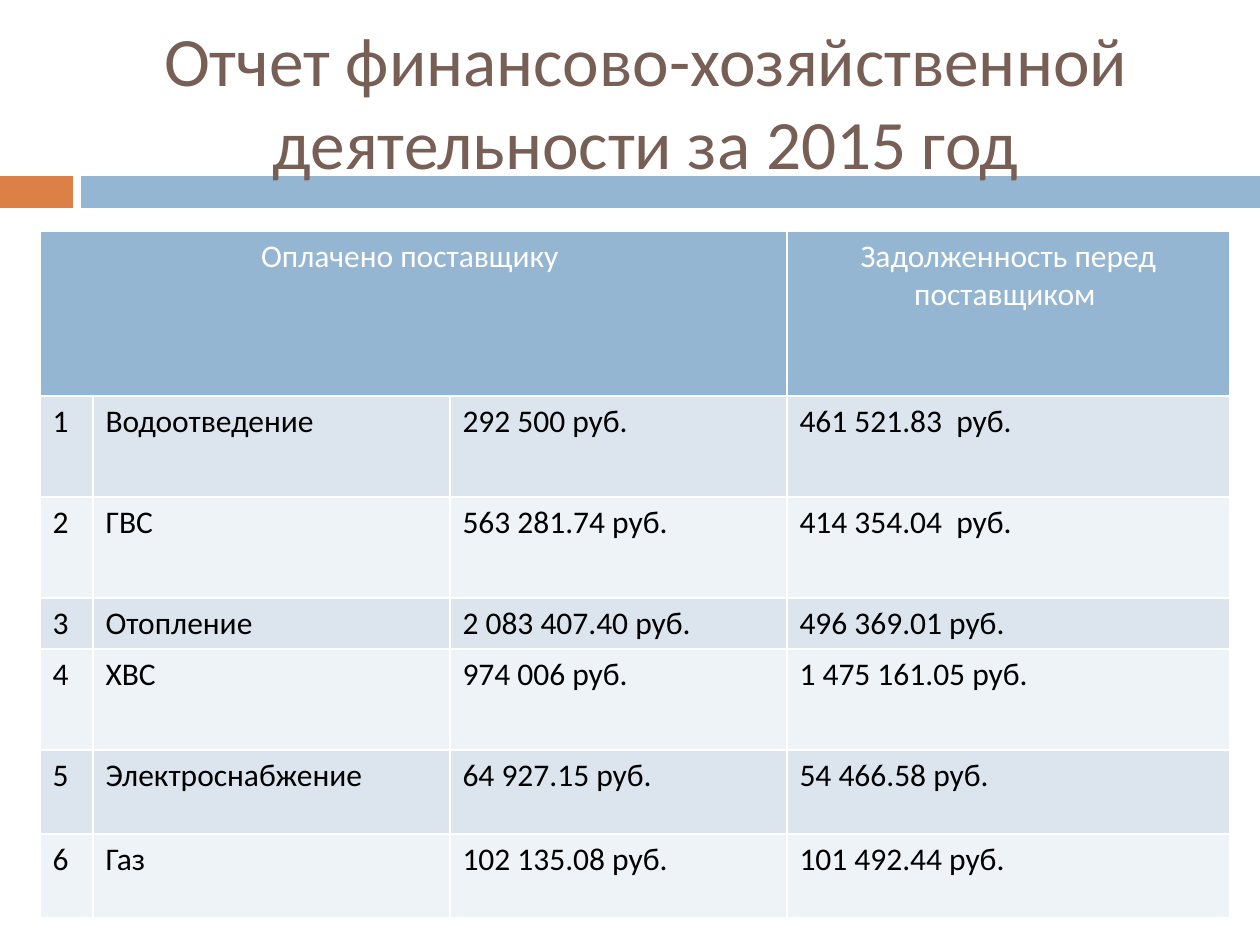
from lxml import etree
from pptx import Presentation
from pptx import util as u
from pptx.dml.color import RGBColor
from pptx.enum import shapes, text
from pptx.oxml import ns

PX = u.Inches(1) // 126
WHITE = RGBColor(0xFF, 0xFF, 0xFF)
BLACK = RGBColor(0, 0, 0)
BROWN = RGBColor(0x77, 0x5F, 0x55)
ORANGE = RGBColor(0xDD, 0x80, 0x47)
BLUE = RGBColor(0x94, 0xB6, 0xD2)
BANDS = (RGBColor(0xDC, 0xE5, 0xEE), RGBColor(0xEE, 0xF3, 0xF7))

COLS = (53, 357, 337, 443)
ROWS = (165, 101, 101, 51, 101, 84, 84)
SUPPLIES = (
    ("Водоотведение", "292 500 руб.", "461 521.83  руб."),
    ("ГВС", "563 281.74 руб.", "414 354.04  руб."),
    ("Отопление", "2 083 407.40 руб.", "496 369.01 руб."),
    ("ХВС", "974 006 руб.", "1 475 161.05 руб."),
    ("Электроснабжение", "64 927.15 руб.", "54 466.58 руб."),
    ("Газ", "102 135.08 руб.", "101 492.44 руб."),
)


def write(tf, words, size=18, color=BLACK, align=text.PP_ALIGN.LEFT):
    p = tf.paragraphs[0]
    p.alignment = align
    r = p.add_run()
    r.text = words
    r.font.name = "Calibri"
    r.font.size = u.Pt(size)
    r.font.color.rgb = color


class Deck:
    """Holds the presentation, its style and the current slide."""

    def __init__(self, width, height):
        self.prs = Presentation()
        self.prs.slide_width, self.prs.slide_height = width * PX, height * PX
        self.s = self.prs.slides.add_slide(self.prs.slide_layouts[6])

    def bar(self, x, y, w, h, color):
        sp = self.s.shapes.add_shape(shapes.MSO_SHAPE.RECTANGLE, x * PX, y * PX, w * PX, h * PX)
        sp.shadow.inherit = False
        sp.fill.solid()
        sp.fill.fore_color.rgb = color
        sp.line.fill.background()

    def title(self, x, y, w, h, words):
        tf = self.s.shapes.add_textbox(x * PX, y * PX, w * PX, h * PX).text_frame
        tf.word_wrap = True
        tf.vertical_anchor = text.MSO_ANCHOR.MIDDLE
        write(tf, words, size=39.6, color=BROWN, align=text.PP_ALIGN.CENTER)

    def table(self, x, y, cols, rows):
        frame = self.s.shapes.add_table(
            len(rows), len(cols), x * PX, y * PX, sum(cols) * PX, sum(rows) * PX)
        tbl = frame.table
        for col, w in zip(tbl.columns, cols):
            col.width = w * PX
        for row, h in zip(tbl.rows, rows):
            row.height = h * PX
        return tbl

    def cell(self, cell, fill, words="", **fmt):
        tc_pr = cell._tc.get_or_add_tcPr()
        for side in ("lnL", "lnR", "lnT", "lnB"):
            ln = etree.SubElement(tc_pr, ns.qn("a:" + side), w=str(u.Pt(1)))
            solid = etree.SubElement(ln, ns.qn("a:solidFill"))
            etree.SubElement(solid, ns.qn("a:srgbClr"), val=str(WHITE))
        cell.fill.solid()
        cell.fill.fore_color.rgb = fill
        if words:
            write(cell.text_frame, words, **fmt)


def main():
    deck = Deck(1260, 945)
    deck.bar(0, 176, 73, 32, ORANGE)
    deck.bar(81, 176, 1179, 32, BLUE)
    deck.title(84, 32, 1124, 136, "Отчет финансово-хозяйственной деятельности за 2015 год")

    tbl = deck.table(40, 231, COLS, ROWS)
    tbl.cell(0, 0).merge(tbl.cell(0, 2))
    for c, words in enumerate(("Оплачено поставщику ", "", "", "Задолженность перед поставщиком ")):
        deck.cell(tbl.cell(0, c), BLUE, words, color=WHITE, align=text.PP_ALIGN.CENTER)
    for n, supply in enumerate(SUPPLIES, 1):
        for c, words in enumerate((str(n), *supply)):
            deck.cell(tbl.cell(n, c), BANDS[(n - 1) % 2], words)
    deck.prs.save("out.pptx")


if __name__ == "__main__":
    main()
